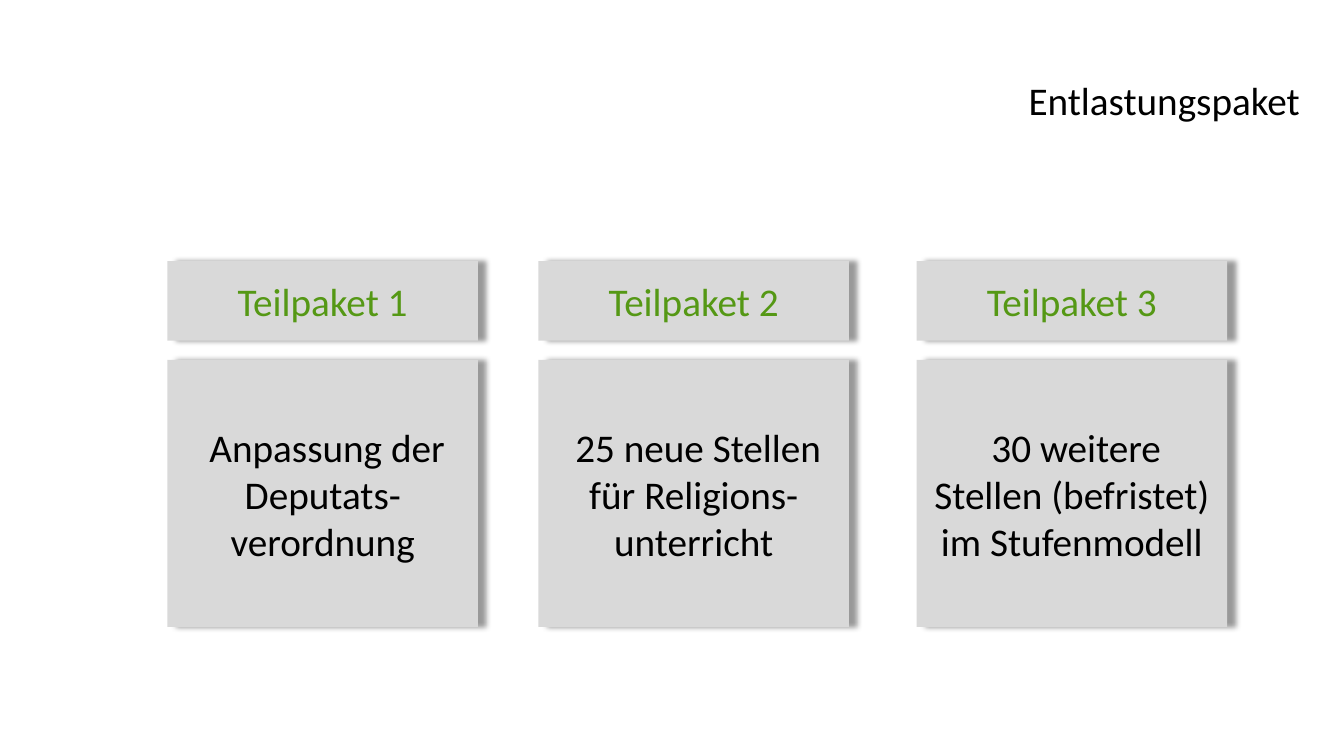
import pptx
import pptx.util
import pptx.dml.color
import pptx.enum.shapes
import pptx.enum.text
import pptx.oxml
import pptx.oxml.ns

PX = 9144  # EMU, 100 px to the inch
COLORS = {"text": "000000", "heading": "559815", "card": "D9D9D9", "shadow": "000000"}
SHADOW = (
    f'<a:effectLst {pptx.oxml.ns.nsdecls("a")}>'
    f'<a:outerShdw blurRad="{pptx.util.Pt(4)}" dist="{pptx.util.Pt(6)}" dir="0" '
    'algn="tl" rotWithShape="0">'
    f'<a:srgbClr val="{COLORS["shadow"]}"><a:alpha val="40000"/></a:srgbClr>'
    '</a:outerShdw></a:effectLst>'
)
ALIGN = pptx.enum.text.PP_ALIGN


def write_text(box, text, color, alignment):
    frame = box.text_frame
    frame.word_wrap = True
    frame.vertical_anchor = pptx.enum.text.MSO_ANCHOR.MIDDLE
    para = frame.paragraphs[0]
    para.text = text
    para.alignment = alignment
    para.font.name = "Calibri"
    para.font.size = pptx.util.Pt(28)
    para.font.color.rgb = pptx.dml.color.RGBColor.from_string(COLORS[color])
    return para


def add_card(page, left, top, height, text, color):
    card = page.shapes.add_shape(
        pptx.enum.shapes.MSO_SHAPE.RECTANGLE,
        left * PX, top * PX, CARD_WIDTH * PX, height * PX)
    card.fill.solid()
    card.fill.fore_color.rgb = pptx.dml.color.RGBColor.from_string(COLORS["card"])
    card.line.fill.background()
    card._element.spPr.append(pptx.oxml.parse_xml(SHADOW))
    write_text(card, text, color, ALIGN.CENTER)


deck = pptx.Presentation()
deck.slide_width = 1333 * PX
deck.slide_height = 750 * PX
page = deck.slides.add_slide(deck.slide_layouts[6])

title = page.shapes.add_textbox(677 * PX, 55 * PX, 622 * PX, 94 * PX)
write_text(title, "Entlastungspaket", "text", ALIGN.RIGHT).line_spacing = 0.9

CARD_WIDTH = 308
packages = [
    (166, " Anpassung der Deputats-verordnung"),
    (534, " 25 neue Stellen für Religions-unterricht"),
    (909, " 30 weitere Stellen (befristet) im Stufenmodell"),
]
for number, (left, content) in enumerate(packages, start=1):
    add_card(page, left, 259, 79, f"Teilpaket {number}", "heading")
    add_card(page, left, 357, 265, content, "text")

deck.save("out.pptx")
